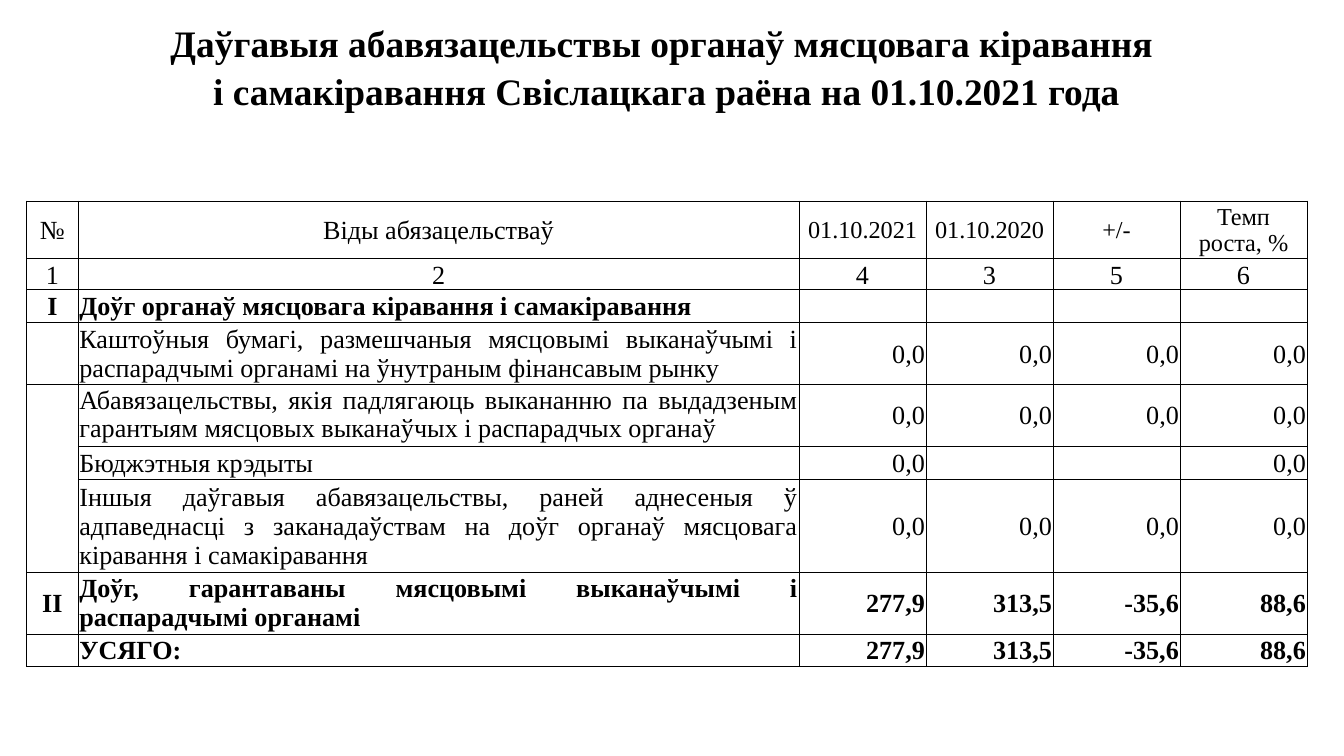
import pptx
import pptx.dml.color
import pptx.enum.text
import pptx.oxml
import pptx.oxml.ns
import pptx.util
from pptx.util import Cm

FONT = "Times New Roman"
BLACK = "000000"
WHITE = "FFFFFF"
PLAIN_TABLE_STYLE = "{2D5ABB26-0587-4C30-8999-92F81FD0307C}"
ALIGN = pptx.enum.text.PP_ALIGN
ANCHOR = pptx.enum.text.MSO_ANCHOR

COLUMN_WIDTHS = [0.98, 13.62] + [2.4] * 4
HEADING_HEIGHTS = [0.97, 1.83, 0.97, 0.69]
BODY_HEIGHTS = [1.09, 0.59, 0.59, 1.17, 1.17, 0.59, 1.75, 1.17, 0.59]

TITLE = [
    "Даўгавыя абавязацельствы органаў мясцовага кіравання ",
    "і самакіравання Свіслацкага раёна на 01.10.2021 года",
]
HEADERS = ["№", "Віды абязацельстваў", "01.10.2021", "01.10.2020", "+/-", "Темп\nроста, %"]
COLUMN_NUMBERS = ["1", "2", "4", "3", "5", "6"]
ZEROS = ["0,0"] * 4
TOTALS = ["277,9", "313,5", "-35,6", "88,6"]
DEBTS = [
    ["I", "Доўг органаў мясцовага кіравання і самакіравання"] + [""] * 4,
    ["", "Каштоўныя бумагі, размешчаныя мясцовымі выканаўчымі і распарадчымі "
     "органамі на ўнутраным фінансавым рынку"] + ZEROS,
    ["", "Абавязацельствы, якія падлягаюць выкананню па выдадзеным гарантыям "
     "мясцовых выканаўчых і распарадчых органаў"] + ZEROS,
    ["", "Бюджэтныя крэдыты", "0,0", "", "", "0,0"],
    ["", "Іншыя даўгавыя абавязацельствы, раней аднесеныя ў адпаведнасці з "
     "заканадаўствам на доўг органаў мясцовага кіравання і самакіравання"] + ZEROS,
    ["II", "Доўг, гарантаваны мясцовымі выканаўчымі і распарадчымі органамі"] + TOTALS,
    ["", "УСЯГО:"] + TOTALS,
]
BOLD_DEBTS = {0, 5, 6}
OPEN_DEBTS = range(1, 5)


def color(value):
    return pptx.dml.color.RGBColor.from_string(value)


def add_borders(cell, sides):
    properties = cell._tc.get_or_add_tcPr()
    for side in sides:
        properties.append(pptx.oxml.parse_xml(
            f'<a:ln{side} {pptx.oxml.ns.nsdecls("a")} w="6350">'
            f'<a:solidFill><a:srgbClr val="{BLACK}"/></a:solidFill></a:ln{side}>'
        ))


def set_empty_size(paragraph, size):
    paragraph._p.append(pptx.oxml.parse_xml(
        f'<a:endParaRPr {pptx.oxml.ns.nsdecls("a")} sz="{size * 100}"/>'
    ))


def fill_cell(cell, lines, size, align, bold=False, anchor=ANCHOR.MIDDLE, spacing=None):
    cell.margin_left = cell.margin_right = cell.margin_top = Cm(0.02)
    cell.margin_bottom = Cm(0)
    cell.vertical_anchor = anchor
    for index, line in enumerate(lines):
        frame = cell.text_frame
        paragraph = frame.add_paragraph() if index else frame.paragraphs[0]
        paragraph.alignment = align
        if spacing:
            paragraph.line_spacing = spacing
        if not line:
            set_empty_size(paragraph, size)
            continue
        run = paragraph.add_run()
        run.text = line
        run.font.name = FONT
        run.font.size = pptx.util.Pt(size)
        run.font.bold = bold
        run.font.color.rgb = color(BLACK)


def add_table(slide):
    heights = HEADING_HEIGHTS + BODY_HEIGHTS
    shape = slide.shapes.add_table(
        len(heights), len(COLUMN_WIDTHS), Cm(0.5), Cm(-0.66),
        Cm(sum(COLUMN_WIDTHS)), Cm(sum(heights)),
    )
    table = shape.table
    table.first_row = table.horz_banding = False
    table._tbl.tblPr.find(pptx.oxml.ns.qn("a:tableStyleId")).text = PLAIN_TABLE_STYLE
    for column, width in zip(table.columns, COLUMN_WIDTHS):
        column.width = Cm(width)
    for row, height in zip(table.rows, heights):
        row.height = Cm(height)
    return table


def fill_heading(table):
    last_row = len(HEADING_HEIGHTS) - 1
    last_column = len(COLUMN_WIDTHS) - 1
    for row in range(last_row + 1):
        for column in range(last_column + 1):
            cell = table.cell(row, column)
            if row == last_row:
                add_borders(cell, "B")
            cell.fill.background()
        lines = TITLE if row == 1 else [""]
        size = 20 if row == 1 else 14
        table.cell(row, 0).merge(table.cell(row, last_column))
        fill_cell(table.cell(row, 0), lines, size, ALIGN.CENTER, True, ANCHOR.BOTTOM, 1.15)


def fill_column_headers(table, top):
    for column, (header, number) in enumerate(zip(HEADERS, COLUMN_NUMBERS)):
        header_cell = table.cell(top, column)
        number_cell = table.cell(top + 1, column)
        for cell in (header_cell, number_cell):
            add_borders(cell, "LRTB")
            cell.fill.background()
        fill_cell(header_cell, header.split("\n"), 14 if column < 2 else 13, ALIGN.CENTER)
        fill_cell(number_cell, [number], 14, ALIGN.CENTER, anchor=ANCHOR.BOTTOM)


def fill_debts(table, top):
    alignments = [ALIGN.CENTER, ALIGN.JUSTIFY] + [ALIGN.RIGHT] * 4
    for index, texts in enumerate(DEBTS):
        for column, text in enumerate(texts):
            cell = table.cell(top + index, column)
            sides = "LRTB"
            if column == 0 and index in OPEN_DEBTS:
                sides = "LR" + "T" * (index == OPEN_DEBTS[0]) + "B" * (index == OPEN_DEBTS[-1])
            add_borders(cell, sides)
            if column < 2:
                cell.fill.background()
            else:
                cell.fill.solid()
                cell.fill.fore_color.rgb = color(WHITE)
            anchor = ANCHOR.TOP if (index, column) == (2, 1) else ANCHOR.MIDDLE
            fill_cell(cell, [text], 14, alignments[column], index in BOLD_DEBTS, anchor)


def main():
    presentation = pptx.Presentation()
    presentation.slide_width = Cm(25.4)
    presentation.slide_height = Cm(14.29)
    slide = presentation.slides.add_slide(presentation.slide_layouts[6])
    table = add_table(slide)
    header_row = len(HEADING_HEIGHTS)
    fill_heading(table)
    fill_column_headers(table, header_row)
    fill_debts(table, header_row + 2)
    presentation.save("out.pptx")


if __name__ == "__main__":
    main()
